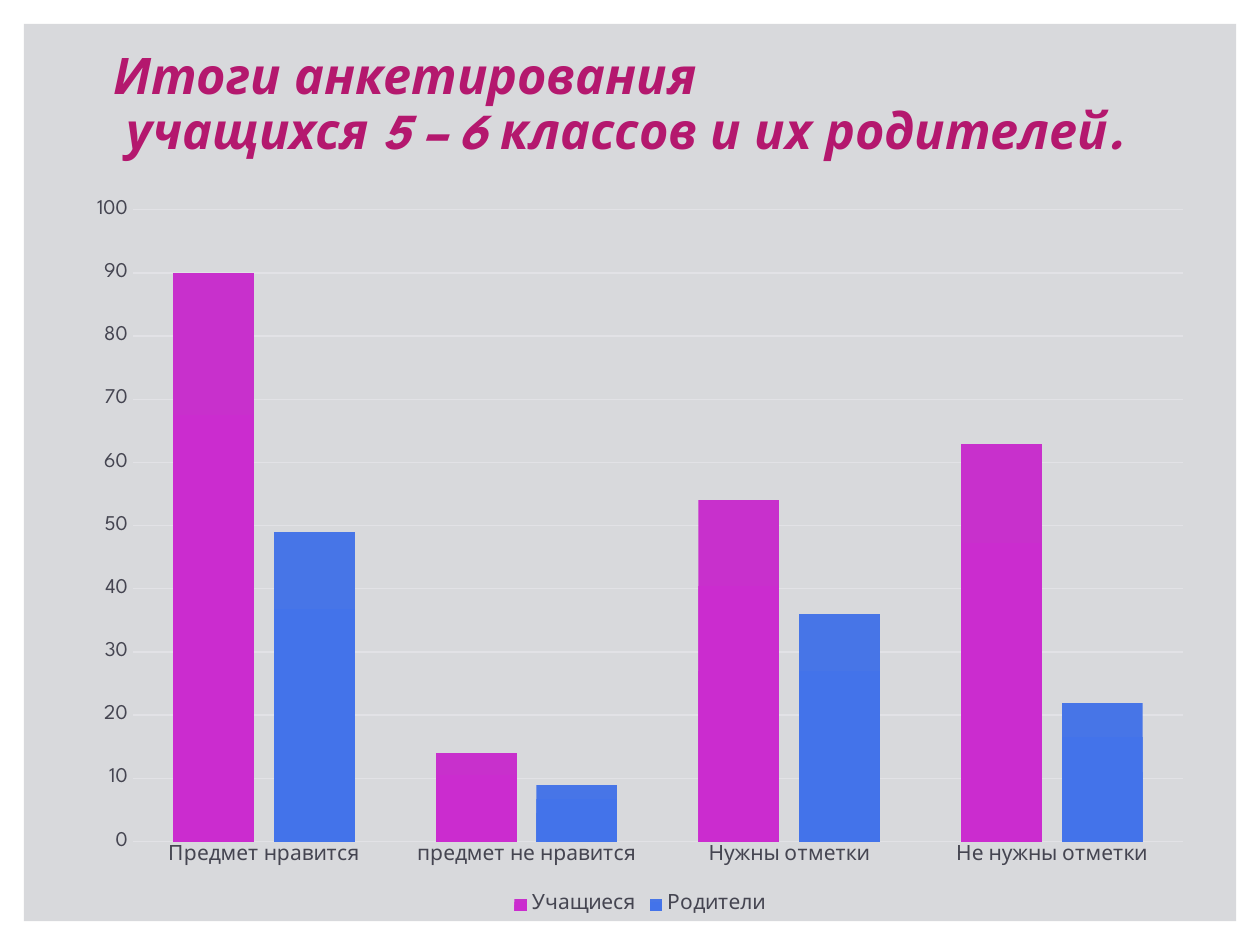
from copy import deepcopy

from pptx import Presentation
from pptx.chart.data import CategoryChartData
from pptx.dml.color import RGBColor
from pptx.enum import chart as ch, shapes, text
from pptx.oxml.ns import qn
from pptx.util import Inches, Pt

# Content
TITLE = "Итоги анкетирования\v учащихся 5 – 6 классов и их родителей."
CATEGORIES = ["Предмет нравится", "предмет не нравится",
              "Нужны отметки", "Не нужны отметки"]
SERIES = [("Учащиеся", [90, 14, 54, 63]), ("Родители", [49, 9, 36, 22])]

THEME = {
    "font": "League Spartan",
    "title_size": 28.8, "label_size": 12,
    "title": "B4186E", "panel": "D8D9DC", "label": "454551", "grid": "E2E2E6",
    "bars": [("C830CC", "CB2CCF", "CA2CCE"), ("4775E7", "4373EA", "4272E9")],
}


def color(name):
    return RGBColor.from_string(THEME[name])


def style_font(font, size, shade):
    font.name, font.size = THEME["font"], Pt(THEME[size])
    font.color.rgb = color(shade)


def style_line(line):
    line.color.rgb = color("grid")
    line.width = Pt(0.75)


def fill_gradient(fill, stops, gs_list):
    """Vertical gradient with evenly spaced stops, first one at the top."""
    for i, (stop, shade) in enumerate(zip(gs_list, stops)):
        stop.position = i / (len(stops) - 1)
        stop.color.rgb = RGBColor.from_string(shade)
    fill.gradient_angle = 270


prs = Presentation()
prs.slide_width, prs.slide_height = Inches(10), Inches(7.5)
s = prs.slides.add_slide(prs.slide_layouts[5])

# Grey panel, behind the title
panel = s.shapes.add_shape(shapes.MSO_SHAPE.RECTANGLE, Inches(0.19), Inches(0.19),
                           Inches(9.62), Inches(7.12))
panel.shadow.inherit = False
panel.fill.solid()
panel.fill.fore_color.rgb = color("panel")
panel.line.fill.background()
s.shapes.title._element.addprevious(panel._element)

# Title
title = s.shapes.title
title.left, title.top = Inches(0.8), Inches(0.21)
title.width, title.height = Inches(8.4), Inches(1.26)
tf = title.text_frame
tf.word_wrap = True
tf.auto_size = text.MSO_AUTO_SIZE.NONE
tf.vertical_anchor = text.MSO_ANCHOR.MIDDLE
tf.text = TITLE
p = tf.paragraphs[0]
p.alignment = text.PP_ALIGN.LEFT
p.line_spacing = 0.9
style_font(p.font, "title_size", "title")
p.font.bold = p.font.italic = True

# Chart
data = CategoryChartData()
data.categories = CATEGORIES
for name, values in SERIES:
    data.add_series(name, values)
chart = s.shapes.add_chart(ch.XL_CHART_TYPE.COLUMN_CLUSTERED, Inches(0.59), Inches(1.47),
                           Inches(8.98), Inches(5.83), data).chart
style_font(chart.font, "label_size", "label")
chart.has_title = False
chart.has_legend = True
chart.legend.position = ch.XL_LEGEND_POSITION.BOTTOM
chart.legend.include_in_layout = False
style_font(chart.legend.font, "label_size", "label")

# Axes
for axis in (chart.category_axis, chart.value_axis):
    axis.major_tick_mark = axis.minor_tick_mark = ch.XL_TICK_MARK.NONE
    style_font(axis.tick_labels.font, "label_size", "label")
style_line(chart.category_axis.format.line)
value_axis = chart.value_axis
value_axis.minimum_scale, value_axis.maximum_scale, value_axis.major_unit = 0, 100, 10
value_axis.format.line.fill.background()
style_line(value_axis.major_gridlines.format.line)

# Bars
plot = chart.plots[0]
plot.gap_width, plot.overlap = 100, -24
plot.vary_by_categories = False
for series, stops in zip(plot.series, THEME["bars"]):
    series.invert_if_negative = False
    fill = series.format.fill
    fill.gradient()
    gs_lst = next(series._element.iter(qn("a:gsLst")))
    gs_lst.append(deepcopy(gs_lst[-1]))
    fill_gradient(fill, stops, fill.gradient_stops)

prs.save("out.pptx")
